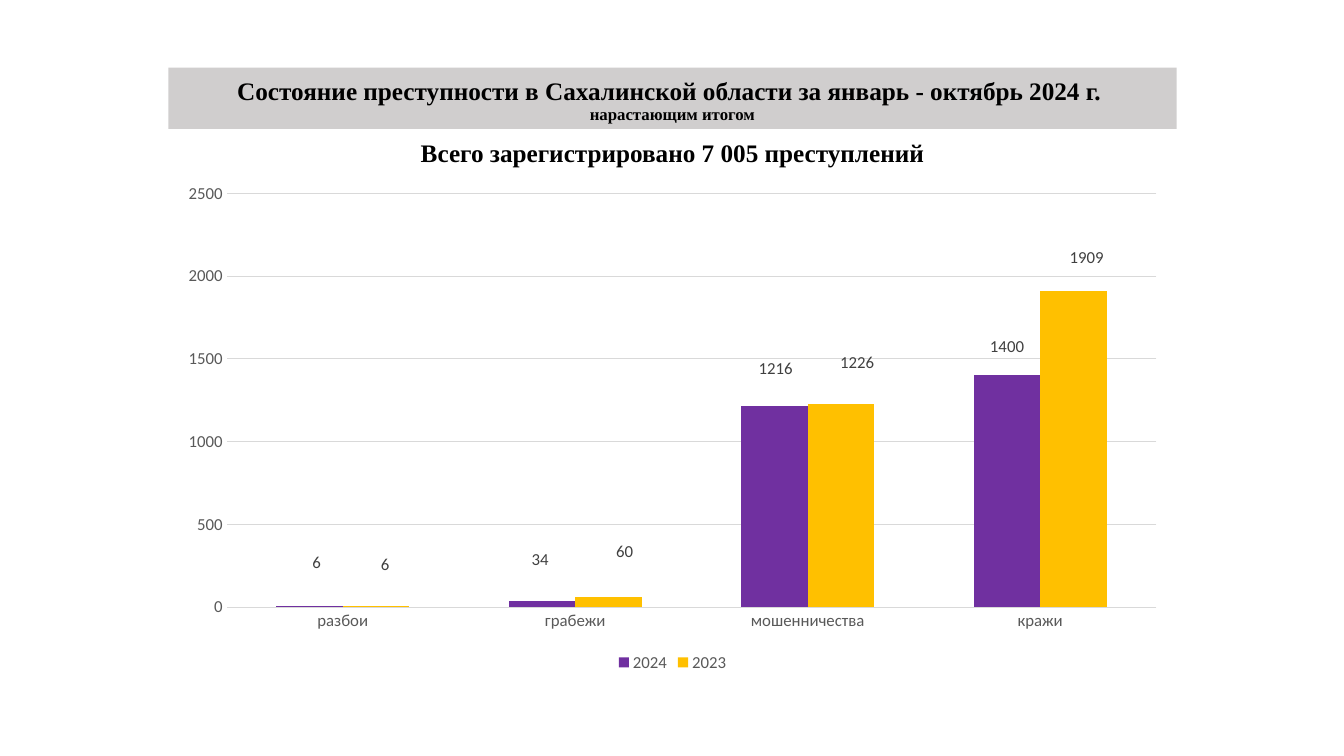
"""Builds a slide comparing registered crimes in 2024 and 2023."""
import lxml.etree
import pptx
import pptx.chart.data
import pptx.dml.color
import pptx.enum.chart
import pptx.enum.shapes
import pptx.enum.text
import pptx.oxml.ns
import pptx.util

Inches, Pt, qn = pptx.util.Inches, pptx.util.Pt, pptx.oxml.ns.qn

BAND_LINES = [
    ("Состояние преступности в Сахалинской области за январь - октябрь 2024 г. ", "heading"),
    ("нарастающим итогом", "small"),
]
TOTAL_LINES = [("Всего зарегистрировано 7 005 преступлений", "heading")]
CRIMES = ["разбои", "грабежи", "мошенничества", "кражи"]
YEARS = [
    {"year": "2024", "counts": [6, 34, 1216, 1400],
     "label_shifts": [(0.07, -0.29), (-0.02, -0.28), (0.01, -0.23), (0, -0.15)]},
    {"year": "2023", "counts": [6, 60, 1226, 1909],
     "label_shifts": [(0.09, -0.27), (0.16, -0.31), (0.16, -0.27), (0.13, -0.19)]},
]
THEME = {
    "fonts": {"heading": "Times New Roman", "chart": "Calibri"},
    "sizes": {"heading": 18, "small": 12},
    "colors": {"ink": "000000", "band": "D0CECE", "axis": "595959", "label": "404040",
               "grid": "D9D9D9", "2024": "7030A0", "2023": "FFC000"},
}
SLIDE_SIZE = (13.33, 7.5)
LEFT, WIDTH = 1.67, 10
BAND_BOX = (LEFT, 0.67, WIDTH, 0.61)
TOTAL_BOX = (LEFT, 1.37, WIDTH, 0.36)
CHART_BOX = (LEFT, 1.72, WIDTH, 4.99)


def inches(lengths):
    return [Inches(length) for length in lengths]


def rgb(role):
    return pptx.dml.color.RGBColor.from_string(THEME["colors"][role])


def fill_solid(part, role):
    part.fill.solid()
    part.fill.fore_color.rgb = rgb(role)


def style_font(font, face, size, role, bold=False):
    font.name = THEME["fonts"][face]
    font.size = Pt(THEME["sizes"][size])
    font.color.rgb = rgb(role)
    font.bold = bold


def style_chart_font(font, role):
    style_font(font, "chart", "small", role)


def write_heading(frame, lines, line_spacing, anchor):
    frame.word_wrap = True
    frame.vertical_anchor = anchor
    paragraph = frame.paragraphs[0]
    paragraph.alignment = pptx.enum.text.PP_ALIGN.CENTER
    paragraph.line_spacing = line_spacing
    for index, (text, size) in enumerate(lines):
        if index:
            paragraph.add_line_break()
        run = paragraph.add_run()
        run.text = text
        style_font(run.font, "heading", size, "ink", bold=True)
    return paragraph


def add_band(slide):
    band = slide.shapes.add_shape(pptx.enum.shapes.MSO_SHAPE.RECTANGLE, *inches(BAND_BOX))
    band.shadow.inherit = False
    fill_solid(band, "band")
    band.line.fill.background()
    write_heading(band.text_frame, BAND_LINES, 0.9, pptx.enum.text.MSO_ANCHOR.BOTTOM)


def add_total(slide):
    total = slide.shapes.add_textbox(*inches(TOTAL_BOX))
    paragraph = write_heading(total.text_frame, TOTAL_LINES, 0.8, pptx.enum.text.MSO_ANCHOR.TOP)
    paragraph.space_before = Pt(10)


def style_axis(axis):
    axis.major_tick_mark = axis.minor_tick_mark = pptx.enum.chart.XL_TICK_MARK.NONE
    axis.format.line.fill.background()
    style_chart_font(axis.tick_labels.font, "axis")


def place_labels(series, shifts):
    series.data_labels.show_value = True
    style_chart_font(series.data_labels.font, "label")
    for index in range(len(shifts)):
        label = series.points[index].data_label
        style_chart_font(label.font, "label")
        label.position = pptx.enum.chart.XL_LABEL_POSITION.OUTSIDE_END

    labels_xml = series.data_labels._element
    for leader_lines in labels_xml.findall(qn("c:showLeaderLines")):
        leader_lines.set("val", "0")
    chart_size = CHART_BOX[2:]
    for label_xml, shift in zip(labels_xml.findall(qn("c:dLbl")), shifts):
        layout = lxml.etree.Element(qn("c:layout"))
        manual = lxml.etree.SubElement(layout, qn("c:manualLayout"))
        for direction, length, extent in zip("xy", shift, chart_size):
            lxml.etree.SubElement(manual, qn(f"c:{direction}"), val=f"{length / extent:.4f}")
        label_xml.find(qn("c:idx")).addnext(layout)


def add_crime_chart(slide):
    crime_data = pptx.chart.data.CategoryChartData()
    crime_data.categories = CRIMES
    for entry in YEARS:
        crime_data.add_series(entry["year"], entry["counts"])
    chart = slide.shapes.add_chart(
        pptx.enum.chart.XL_CHART_TYPE.COLUMN_CLUSTERED, *inches(CHART_BOX), crime_data).chart
    style_chart_font(chart.font, "axis")
    chart.has_title = False

    chart.has_legend = True
    chart.legend.position = pptx.enum.chart.XL_LEGEND_POSITION.BOTTOM
    chart.legend.include_in_layout = False
    style_chart_font(chart.legend.font, "axis")

    for axis in (chart.category_axis, chart.value_axis):
        style_axis(axis)
    chart.value_axis.has_major_gridlines = True
    grid = chart.value_axis.major_gridlines.format.line
    grid.width = Pt(0.75)
    grid.color.rgb = rgb("grid")

    plot = chart.plots[0]
    plot.gap_width, plot.overlap, plot.vary_by_categories = 150, 0, False
    for series, entry in zip(plot.series, YEARS):
        fill_solid(series.format, entry["year"])
        place_labels(series, entry["label_shifts"])


def main():
    deck = pptx.Presentation()
    deck.slide_width, deck.slide_height = inches(SLIDE_SIZE)
    slide = deck.slides.add_slide(deck.slide_layouts[6])
    add_band(slide)
    add_total(slide)
    add_crime_chart(slide)
    deck.save("out.pptx")


if __name__ == "__main__":
    main()
